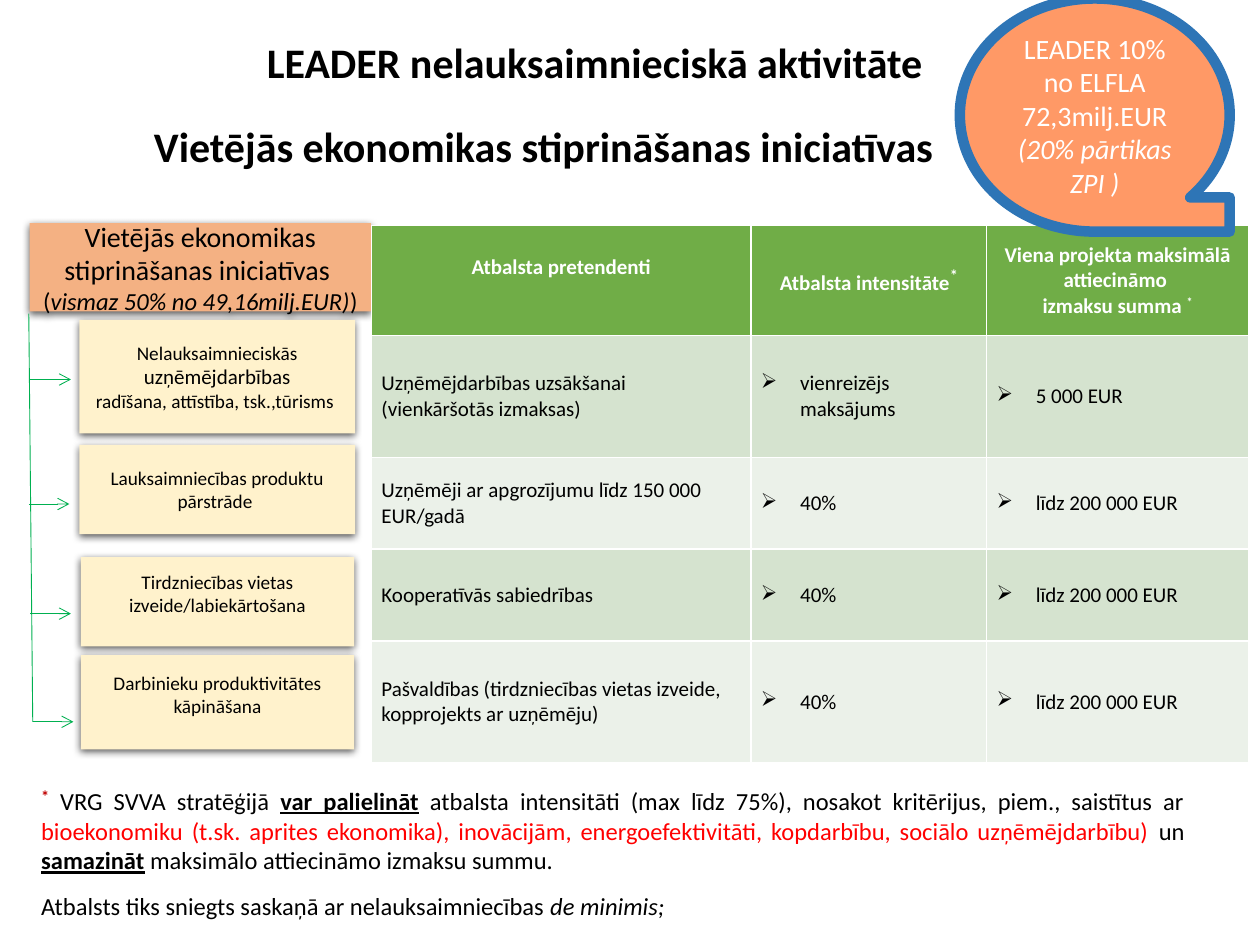
"""Build the slide on LEADER support for local economy initiatives."""
from dataclasses import dataclass

from lxml.etree import SubElement
from pptx import Presentation
from pptx.dml.color import RGBColor
from pptx.enum.shapes import MSO_CONNECTOR as LINE, MSO_SHAPE as SHAPE
from pptx.enum.text import MSO_ANCHOR as ANCHOR, MSO_AUTO_SIZE as FIT, PP_ALIGN as ALIGN
from pptx.oxml import parse_xml
from pptx.oxml.ns import nsdecls, qn
from pptx.util import Cm, Pt


@dataclass(frozen=True)
class Theme:
    font: str = "Calibri"
    black: str = "000000"
    white: str = "FFFFFF"
    red: str = "FF0000"
    dark_red: str = "C00000"
    arrow: str = "00B050"
    heading: str = "F4B183"
    activity: str = "FFF2CC"
    header: str = "70AD47"
    bands: tuple = ("D5E3CF", "EBF1E9")
    tape: str = "FF9966"
    tape_line: str = "2E75B6"
    title: int = 24
    large: int = 16
    note: int = 14
    cell: int = 12
    small: int = 11


T = Theme()

ACTIVITIES = [
    (1.6, 6.45, 5.56, 2.29, 0.61, 7.65, 0.13,
     [[("Nelauksaimnieciskās ", {}), ("uzņēmējdarbības", {"size": T.cell})],
      [("radīšana, attīstība, tsk.,tūrisms ", {})]]),
    (1.6, 8.97, 5.56, 1.8, 0.58, 10.16, 0.13,
     [[("Lauksaimniecības produktu pārstrāde ", {})]]),
    (1.63, 11.23, 5.51, 1.8, 0.61, 12.37, 0.45,
     [[("Tirdzniecības vietas izveide/labiekārtošana", {})]]),
    (1.63, 13.21, 5.51, 1.9, 0.66, 14.55, 0.45,
     [[("Darbinieku produktivitātes kāpināšana", {})]]),
]

STAR = ("*", {"raised": True})
HEADERS = [
    [[("Atbalsta pretendenti", {})]],
    [[("Atbalsta intensitāte", {}), ("*", {"raised": True, "size": T.large})]],
    [[("Viena projekta maksimālā attiecināmo ", {})], [("izmaksu summa ", {}), STAR]],
]
ROWS = [
    (["Uzņēmējdarbības uzsākšanai", "(vienkāršotās izmaksas)"], "vienreizējs maksājums", "5 000 EUR"),
    (["Uzņēmēji ar apgrozījumu līdz 150 000 EUR/gadā"], "40%", "līdz 200 000 EUR"),
    (["Kooperatīvās sabiedrības"], "40%", "līdz 200 000 EUR"),
    (["Pašvaldības (tirdzniecības vietas izveide, kopprojekts ar uzņēmēju)"], "40%", "līdz 200 000 EUR"),
]
COL_WIDTHS = (7.65, 4.75, 5.28)
ROW_HEIGHTS = (2.21, 2.46, 1.85, 1.85, 2.46)

EMPHASIS = {"bold": True, "underline": True}
NOTE = [
    [("*", {"raised": True, "size": T.large, "color": T.dark_red, "bold": True}),
     (" VRG SVVA stratēģijā ", {}), ("var palielināt", EMPHASIS),
     (" atbalsta intensitāti (max līdz 75%), nosakot kritērijus, piem., saistītus ar ", {}),
     ("bioekonomiku (t.sk. aprites ekonomika), inovācijām, energoefektivitāti, kopdarbību, "
      "sociālo uzņēmējdarbību) ", {"color": T.red}),
     ("un ", {}), ("samazināt", EMPHASIS), (" maksimālo attiecināmo izmaksu summu.", {})],
    [("Atbalsts tiks sniegts saskaņā ar nelauksaimniecības ", {}), ("de minimis;", {"italic": True})],
]


def rgb(color):
    """Turn a hex code into a colour."""
    return RGBColor.from_string(color)


def add_run(p, text, size, color=T.black, bold=False, italic=False, underline=False, raised=False):
    """Append one formatted run."""
    r = p.add_run()
    r.text = text
    f = r.font
    f.name, f.size, f.bold, f.italic, f.underline = T.font, Pt(size), bold, italic, underline
    f.color.rgb = rgb(color)
    if raised:
        r._r.get_or_add_rPr().set("baseline", "30000")


def write(tf, paragraphs, align=ALIGN.CENTER, **base):
    """Fill a text frame with paragraphs of (text, format) runs."""
    for i, runs in enumerate(paragraphs):
        p = tf.add_paragraph() if i else tf.paragraphs[0]
        p.alignment = align
        for text, fmt in runs:
            add_run(p, text, **{**base, **fmt})


def add_box(slide, kind, box, fill, paragraphs, **base):
    """Add a filled shape without outline and with centred text."""
    sp = slide.shapes.add_shape(kind, *map(Cm, box))
    sp.shadow.inherit = False
    sp.fill.solid()
    sp.fill.fore_color.rgb = rgb(fill)
    sp.line.fill.background()
    sp.text_frame.vertical_anchor = ANCHOR.MIDDLE
    write(sp.text_frame, paragraphs, **base)
    return sp


def add_shadow(sp):
    """Give a shape a soft shadow below it."""
    effects = sp._element.spPr.find(qn("a:effectLst"))
    effects.append(parse_xml(
        f'<a:outerShdw {nsdecls("a")} blurRad="{Pt(4.5)}" dist="{Pt(1.5)}" dir="5400000" rotWithShape="0">'
        '<a:srgbClr val="000000"><a:alpha val="63000"/></a:srgbClr></a:outerShdw>'))


def add_line(slide, ends, arrow=False):
    """Add a thin line, with an open arrowhead if asked."""
    line = slide.shapes.add_connector(LINE.STRAIGHT, *map(Cm, ends))
    line.line.color.rgb = rgb(T.arrow)
    line.line.width = Pt(0.5)
    spPr = line._element.spPr
    if arrow:
        SubElement(spPr.get_or_add_ln(), qn("a:tailEnd"), type="arrow")
    SubElement(spPr, qn("a:effectLst"))


def add_text(slide, box, paragraphs, align, wrap, **base):
    """Add a text box and return its frame."""
    tf = slide.shapes.add_textbox(*map(Cm, box)).text_frame
    tf.word_wrap = wrap
    write(tf, paragraphs, align, **base)
    return tf


def set_title(slide, text):
    """Move and format the title placeholder."""
    title = slide.shapes.title
    title.left, title.top, title.width, title.height = map(Cm, (0.28, 2.41, 21.36, 1.17))
    tf = title.text_frame
    tf.auto_size = FIT.NONE
    tf.vertical_anchor = ANCHOR.MIDDLE
    write(tf, [[(text, {})]], size=T.title, bold=True)
    tf.paragraphs[0].line_spacing = 0.9


def add_activities(slide):
    """Add the heading, its spine and the activities with arrows."""
    heading = [[("Vietējās ekonomikas stiprināšanas iniciatīvas ", {"size": T.large})],
               [("(", {}), ("vismaz 50% no 49,16milj.EUR)", {"italic": True}), (")", {})]]
    add_shadow(add_box(slide, SHAPE.RECTANGLE, (0.6, 4.5, 6.88, 1.78), T.heading, heading, size=T.note))
    add_line(slide, (0.58, 6.32, 0.66, 14.55))
    for x, y, w, h, arrow_x, arrow_y, bottom, paragraphs in ACTIVITIES:
        sp = add_box(slide, SHAPE.RECTANGLE, (x, y, w, h), T.activity, paragraphs, size=T.small)
        sp.text_frame.margin_bottom = Cm(bottom)
        add_shadow(sp)
        add_line(slide, (arrow_x, arrow_y, arrow_x + 0.82, arrow_y), arrow=True)


def fill_cell(cell, fill, paragraphs, align=ALIGN.LEFT, bullet=False, **base):
    """Fill a table cell, with an arrow bullet if asked."""
    cell.fill.solid()
    cell.fill.fore_color.rgb = rgb(fill)
    cell.vertical_anchor = ANCHOR.MIDDLE
    cell.margin_left = cell.margin_right = Cm(0.2)
    cell.margin_top = cell.margin_bottom = Cm(0.1)
    write(cell.text_frame, paragraphs, align, size=T.cell, **base)
    if bullet:
        pPr = cell.text_frame.paragraphs[0]._p.get_or_add_pPr()
        pPr.set("marL", str(Cm(0.79)))
        pPr.set("indent", str(-Cm(0.79)))
        SubElement(pPr, qn("a:buChar"), char="➢")


def add_support_table(slide):
    """Add the table of applicants, intensity and maximum sums."""
    table = slide.shapes.add_table(len(ROW_HEIGHTS), len(COL_WIDTHS), Cm(7.49), Cm(4.55),
                                   Cm(sum(COL_WIDTHS)), Cm(sum(ROW_HEIGHTS))).table
    for col, width in zip(table.columns, COL_WIDTHS):
        col.width = Cm(width)
    for row, height in zip(table.rows, ROW_HEIGHTS):
        row.height = Cm(height)
    for c, paragraphs in enumerate(HEADERS):
        fill_cell(table.cell(0, c), T.header, paragraphs, ALIGN.CENTER, color=T.white, bold=True)
    table.cell(0, 0).margin_bottom = Cm(0.64)
    for i, (applicant, *values) in enumerate(ROWS):
        band = T.bands[i % 2]
        fill_cell(table.cell(i + 1, 0), band, [[(text, {})] for text in applicant])
        for c, value in enumerate(values, 1):
            fill_cell(table.cell(i + 1, c), band, [[(value, {})]], bullet=True)


def add_budget(slide):
    """Add the outlined budget callout."""
    paragraphs = [[("LEADER 10% no ELFLA 72,3milj.EUR", {})], [("(20% pārtikas ZPI )", {"italic": True})]]
    sp = add_box(slide, SHAPE.FLOWCHART_SEQUENTIAL_ACCESS_STORAGE, (19.35, -0.03, 5.44, 4.7), T.tape,
                 paragraphs, size=T.large, color=T.white)
    sp.line.color.rgb = rgb(T.tape_line)
    sp.line.width = Pt(6)


def main():
    """Build and save the slide."""
    prs = Presentation()
    prs.slide_width, prs.slide_height = Cm(25.4), Cm(19.05)
    slide = prs.slides.add_slide(prs.slide_layouts[5])
    set_title(slide, "Vietējās ekonomikas stiprināšanas iniciatīvas")
    add_activities(slide)
    add_support_table(slide)
    note = add_text(slide, (0.58, 15.65, 23.55, 3), NOTE, ALIGN.JUSTIFY, True, size=T.note)
    note.paragraphs[1].space_before = Pt(9)
    add_text(slide, (5.13, 0.61, 13.87, 1.27), [[("LEADER nelauksaimnieciskā aktivitāte", {})]],
             ALIGN.LEFT, False, size=T.title, bold=True)
    add_budget(slide)
    prs.save("out.pptx")


if __name__ == "__main__":
    main()
